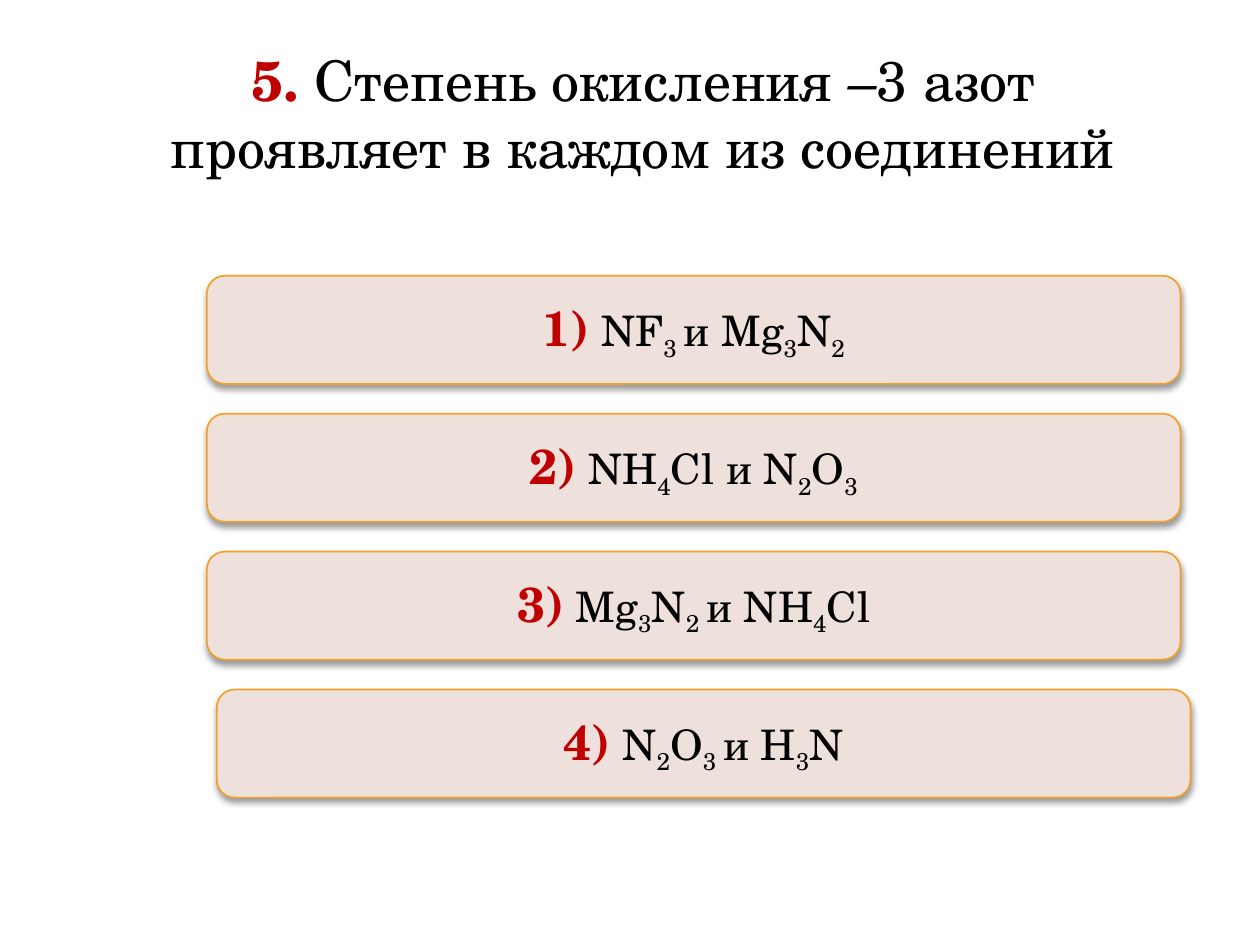
import pptx
import pptx.dml.color
import pptx.enum.shapes
import pptx.enum.text
import pptx.oxml
import pptx.oxml.ns
import pptx.util

Cm = pptx.util.Cm
Pt = pptx.util.Pt
COLORS = {"text": "000000", "accent": "C00000", "card": "EEE0DB",
          "border": "F0A22E", "shadow": "000000"}


class SlideBuilder:
    font = "TeX Gyre Schola"

    def __init__(self, s):
        self.s = s

    def color(self, name):
        return pptx.dml.color.RGBColor.from_string(COLORS[name])

    def run(self, p, text, size, color="text", bold=False, italic=False, sub=False):
        r = p.add_run()
        r.text = text
        r.font.name = self.font
        r.font.size = Pt(size)
        r.font.bold = bold
        r.font.italic = italic
        r.font.color.rgb = self.color(color)
        if sub:
            r.font._element.set("baseline", "-25000")

    def title(self, number, parts, left, top, width, height):
        sp = self.s.shapes.title
        sp.left, sp.top, sp.width, sp.height = left, top, width, height
        tf = sp.text_frame
        tf.word_wrap = True
        tf.auto_size = pptx.enum.text.MSO_AUTO_SIZE.NONE
        tf.vertical_anchor = pptx.enum.text.MSO_ANCHOR.TOP
        p = tf.paragraphs[0]
        p.alignment = pptx.enum.text.PP_ALIGN.CENTER
        self.run(p, number, 32, "accent", bold=True)
        for text, italic in parts:
            self.run(p, text, 32, italic=italic)

    def shadow(self, sp):
        sp.shadow.inherit = False
        effects = sp._element.spPr.find(pptx.oxml.ns.qn("a:effectLst"))
        effects.append(pptx.oxml.parse_xml(
            f'<a:outerShdw {pptx.oxml.ns.nsdecls("a")} blurRad="{Pt(4)}" '
            f'dist="{Pt(2)}" dir="5400000" rotWithShape="0">'
            f'<a:srgbClr val="{COLORS["shadow"]}"><a:alpha val="40000"/>'
            '</a:srgbClr></a:outerShdw>'))

    def answer(self, number, formula, left, top, width, height):
        """Add an answer card; underscores switch subscript on and off."""
        sp = self.s.shapes.add_shape(
            pptx.enum.shapes.MSO_SHAPE.ROUNDED_RECTANGLE, left, top, width, height)
        sp.fill.solid()
        sp.fill.fore_color.rgb = self.color("card")
        sp.line.color.rgb = self.color("border")
        sp.line.width = Pt(1)
        self.shadow(sp)
        tf = sp.text_frame
        tf.word_wrap = True
        tf.vertical_anchor = pptx.enum.text.MSO_ANCHOR.MIDDLE
        p = tf.paragraphs[0]
        p.alignment = pptx.enum.text.PP_ALIGN.CENTER
        self.run(p, f"{number})", 28, "accent", bold=True)
        self.run(p, " ", 24, italic=True)
        for i, text in enumerate(formula.split("_")):
            if text:
                self.run(p, text, 24, sub=i % 2 == 1)


def main():
    prs = pptx.Presentation()
    prs.slide_width, prs.slide_height = Cm(25.4), Cm(19.05)
    builder = SlideBuilder(prs.slides.add_slide(prs.slide_layouts[5]))

    # Question
    builder.title("5.", [(" Степень окисления ", False), ("–", True),
                         ("3 азот проявляет в каждом из соединений", False)],
                  Cm(2.77), Cm(0.79), Cm(20.4), Cm(4.37))

    # Answers, evenly spaced; the last one sits slightly to the right
    answers = ["NF_3 _и Mg_3_N_2", "NH_4_Cl и N_2_O_3",
               "Mg_3_N_2 _и NH_4_Cl", "N_2_O_3 _и H_3_N"]
    for i, formula in enumerate(answers):
        left = 4.37 if i == len(answers) - 1 else 4.17
        builder.answer(i + 1, formula, Cm(left), Cm(5.56 + 2.78 * i),
                       Cm(19.63), Cm(2.18))

    prs.save("out.pptx")


if __name__ == "__main__":
    main()
